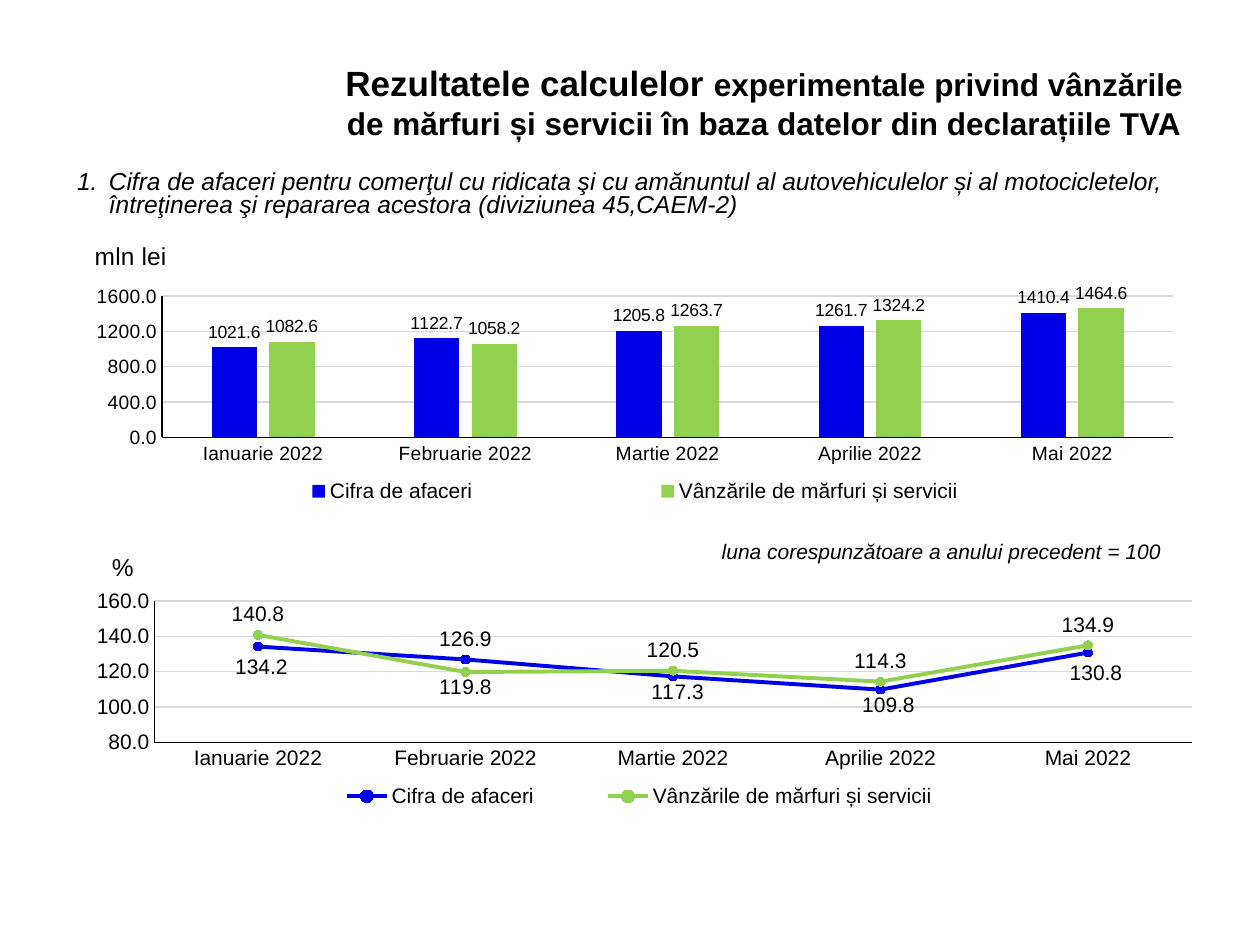
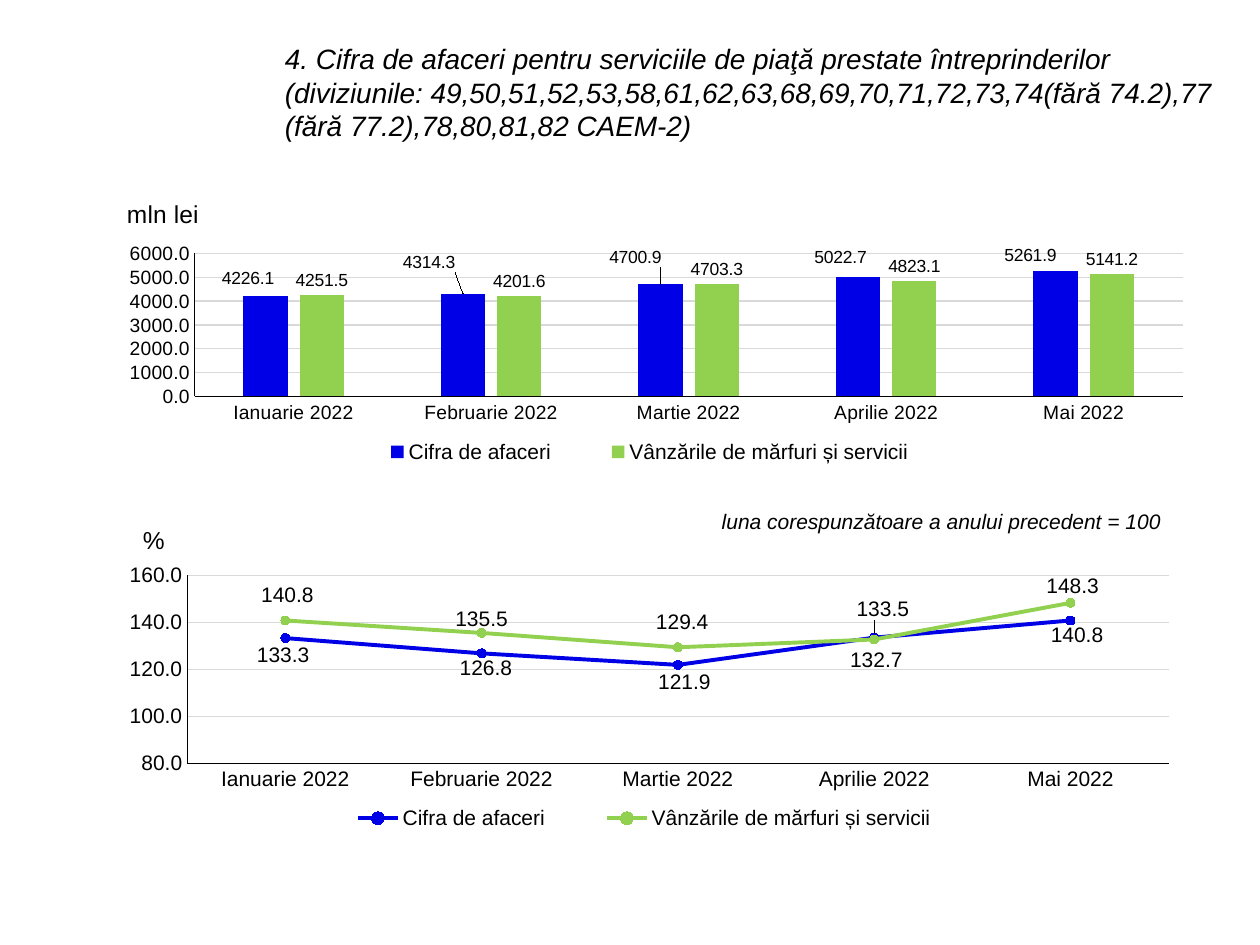
"""Build two slides of VAT turnover results, each with a column and a line chart."""
from lxml import etree
from pptx import Presentation
from pptx import util as u
from pptx.chart import data as chart_data
from pptx.dml.color import RGBColor
from pptx.enum import chart as ch
from pptx.enum import text as tx
from pptx.oxml import ns

COLORS = {"ink": "000000", "turnover": "0000E6", "sales": "92D050", "grid": "D9D9D9"}
FONT = "Arial"
MONTHS = [f"{month} 2022" for month in ("Ianuarie", "Februarie", "Martie", "Aprilie", "Mai")]
SERIES = [("Cifra de afaceri", "turnover"), ("Vânzările de mărfuri și servicii", "sales")]
NOTE = "luna corespunzătoare a anului precedent = 100"
POSITIONS = {
    "above": ch.XL_LABEL_POSITION.ABOVE,
    "below": ch.XL_LABEL_POSITION.BELOW,
    "out": ch.XL_LABEL_POSITION.OUTSIDE_END,
}
KINDS = {
    "column": dict(type=ch.XL_CHART_TYPE.COLUMN_CLUSTERED, unit="mln lei", axis_size=11,
                   label_size=10, label_at="out", format="0.0"),
    "line": dict(type=ch.XL_CHART_TYPE.LINE_MARKERS, unit="%", axis_size=12,
                 label_size=12, label_at="above", format="#,##0.0"),
}

# Boxes are in centimetres; unit, plot, legend and nudges are in percent of the chart.
SLIDES = [
    dict(
        title=[("Rezultatele calculelor ", 20),
               ("experimentale privind vânzările de mărfuri și servicii "
                "în baza datelor din declarațiile TVA", 18)],
        title_box=(6.5, 1.12, 17.81, 1.4),
        title_format=dict(bold=True, align=tx.PP_ALIGN.CENTER),
        item="Cifra de afaceri pentru comerţul cu ridicata şi cu amănuntul al autovehiculelor "
             "și al motocicletelor, întreţinerea şi repararea acestora (diviziunea 45,CAEM-2)",
        item_box=(1.3, 3.33, 23.01, 13.59),
        note_box=(14.3, 10.74, 10.21, 1.55),
        charts=[
            dict(kind="column", box=(1.5, 4.52, 22.61, 5.79), scale=(0, 1600, 400),
                 unit_at=(1.4, 4), plot=(7.8, 25, 90.2, 49.2), legend=(5, 88, 90, 10),
                 values=[(1021.6, 1122.7, 1205.8, 1261.7, 1410.4),
                         (1082.6, 1058.2, 1263.7, 1324.2, 1464.6)],
                 nudges=[{}, {}]),
            dict(kind="line", box=(1.5, 10.67, 23.01, 5.79), scale=(80, 160, 20),
                 unit_at=(2.9, 6), plot=(7, 25, 90.9, 49.2), legend=(18, 88, 63, 10),
                 values=[(134.2, 126.9, 117.3, 109.8, 130.8),
                         (140.8, 119.8, 120.5, 114.3, 134.9)],
                 nudges=[{0: ("below", 0.3, 0), 2: ("below", 0.4, -1.7),
                          3: ("below", 0.7, -1.7), 4: ("below", 0.7, 0)},
                         {1: ("below", 0, -1.7)}]),
        ],
    ),
    dict(
        title=[("4. Cifra de afaceri pentru serviciile de piaţă prestate întreprinderilor\v"
                "(diviziunile: 49,50,51,52,53,58,61,62,63,68,69,70,71,72,73,74(fără 74.2),77 "
                "(fără 77.2),78,80,81,82 CAEM-2)", 16)],
        title_box=(5.49, 0.71, 19.41, 3),
        title_format=dict(italic=True, align=tx.PP_ALIGN.LEFT),
        note_box=(14.3, 10.13, 10.21, 1.55),
        charts=[
            dict(kind="column", box=(2.16, 3.68, 22.1, 5.84), scale=(0, 6000, 1000),
                 unit_at=(1.4, 4), plot=(8, 24.5, 90.1, 49.3), legend=(21, 88, 57, 10),
                 values=[(4226.1, 4314.3, 4700.9, 5022.7, 5261.9),
                         (4251.5, 4201.6, 4703.3, 4823.1, 5141.2)],
                 nudges=[{0: ("out", -1.6, -0.7), 1: ("out", -3.1, -5.5),
                          2: ("out", -2.3, -4.1), 3: ("out", -1.6, -1.4),
                          4: ("out", -2.3, -0.3)}, {}]),
            dict(kind="line", box=(2.18, 10.13, 21.84, 6.81), scale=(80, 160, 20),
                 unit_at=(2.8, 5), plot=(7.3, 21.6, 90.6, 55.6), legend=(18, 89.5, 63, 8),
                 values=[(133.3, 126.8, 121.9, 133.5, 140.8),
                         (140.8, 135.5, 129.4, 132.7, 148.3)],
                 nudges=[{0: ("below", -0.2, -1), 1: ("below", 0.4, -1.5),
                          2: ("below", 0.6, -1), 3: ("above", 0.8, -2.4),
                          4: ("below", 0.6, -1.8)},
                         {0: ("above", 0.2, -1.5), 1: ("above", 0, 2),
                          2: ("above", 0.4, -1.2), 3: ("below", 0.2, 0),
                          4: ("above", 0.2, 1.2)}]),
        ],
    ),
]


def color(key):
    return RGBColor.from_string(COLORS[key])


def set_font(font, size, bold=False, italic=False):
    font.name, font.size, font.bold, font.italic = FONT, u.Pt(size), bold, italic
    font.color.rgb = color("ink")


def write(frame, content, size=12, bold=False, italic=False, align=None):
    paragraph = frame.paragraphs[0]
    paragraph.alignment = align
    for words, points in [(content, size)] if isinstance(content, str) else content:
        for number, part in enumerate(words.split("\v")):
            if number:
                paragraph.add_line_break()
            run = paragraph.add_run()
            run.text = part
            set_font(run.font, points, bold, italic)
    return paragraph


def fit(box, sides):
    box.left, box.top, box.width, box.height = map(u.Cm, sides)
    frame = box.text_frame
    frame.word_wrap = True
    frame.auto_size = tx.MSO_AUTO_SIZE.NONE
    frame.vertical_anchor = tx.MSO_ANCHOR.TOP
    return frame


def place(part, index, percents, modes=()):
    for old in part.findall(ns.qn("c:layout")):
        part.remove(old)
    layout = etree.Element(ns.qn("c:layout"))
    manual = etree.SubElement(layout, ns.qn("c:manualLayout"))
    sides = [(side, f"{percent / 100:g}") for side, percent in zip("xywh", percents)]
    for tag, value in [*modes, *sides]:
        etree.SubElement(manual, ns.qn(f"c:{tag}")).set("val", value)
    part.insert(index, layout)


def style_axes(chart, kind, scale):
    values = chart.value_axis
    values.minimum_scale, values.maximum_scale, values.major_unit = scale
    values.tick_labels.number_format = kind["format"]
    values.tick_labels.number_format_is_linked = False
    values.has_major_gridlines = True
    grid = values.major_gridlines.format.line
    for line, key in ((grid, "grid"), (values.format.line, "ink"),
                      (chart.category_axis.format.line, "ink")):
        line.color.rgb = color(key)
        line.width = u.Pt(0.75)
    for axis in (values, chart.category_axis):
        axis.major_tick_mark = axis.minor_tick_mark = ch.XL_TICK_MARK.NONE
        set_font(axis.tick_labels.font, kind["axis_size"])


def style_series(chart, number, series, kind, nudges):
    shade = color(SERIES[number][1])
    if kind is KINDS["line"]:
        series.smooth = False
        series.format.line.color.rgb = shade
        series.format.line.width = u.Pt(2.25)
        series.marker.style = ch.XL_MARKER_STYLE.CIRCLE
        series.marker.size = 5
        dot = series.marker.format
        dot.fill.solid()
        dot.fill.fore_color.rgb = dot.line.color.rgb = shade
    else:
        series.format.fill.solid()
        series.format.fill.fore_color.rgb = shade
    labels = series.data_labels
    labels.show_value = True
    labels.number_format, labels.number_format_is_linked = kind["format"], False
    labels.position = POSITIONS[kind["label_at"]]
    set_font(labels.font, kind["label_size"])
    for month, (side, *shift) in nudges.items():
        label = series.points[month].data_label
        set_font(label.font, kind["label_size"])
        label.position = POSITIONS[side]
        found = chart.element.xpath(
            f".//c:ser[{number + 1}]/c:dLbls/c:dLbl[c:idx/@val={month}]")
        place(found[0], 1, shift)


def add_chart(slide, kind, box, scale, unit_at, plot, legend, values, nudges):
    kind = KINDS[kind]
    figures = chart_data.CategoryChartData(number_format=kind["format"])
    figures.categories = MONTHS
    for (name, _), numbers in zip(SERIES, values):
        figures.add_series(name, numbers)
    chart = slide.shapes.add_chart(kind["type"], *map(u.Cm, box), figures).chart
    set_font(chart.font, 10)
    chart.has_title = True
    write(chart.chart_title.text_frame, kind["unit"], size=14)
    chart.has_legend = True
    chart.legend.position = ch.XL_LEGEND_POSITION.BOTTOM
    chart.legend.include_in_layout = False
    set_font(chart.legend.font, 12)
    style_axes(chart, kind, scale)
    group = chart.plots[0]
    group.vary_by_categories = False
    if kind is KINDS["column"]:
        group.gap_width, group.overlap = 219, -27
    for number, series in enumerate(group.series):
        style_series(chart, number, series, kind, nudges[number])
    edges = [("xMode", "edge"), ("yMode", "edge")]
    root = chart.element
    place(root.xpath("c:chart/c:title")[0], 1, unit_at, edges)
    place(root.xpath("c:chart/c:plotArea")[0], 0, plot, [("layoutTarget", "inner"), *edges])
    place(root.xpath("c:chart/c:legend")[0], 1, legend, edges)


def add_item(body, item, box):
    paragraph = fit(body, box).paragraphs[0]
    properties = paragraph._p.get_or_add_pPr()
    properties.set("marL", str(u.Cm(0.64)))
    properties.set("indent", str(u.Cm(-0.64)))
    etree.SubElement(properties, ns.qn("a:buFont")).set("typeface", FONT)
    etree.SubElement(properties, ns.qn("a:buAutoNum")).set("type", "arabicPeriod")
    write(body.text_frame, item, size=14, italic=True)
    paragraph.line_spacing = 0.8
    paragraph.space_before = u.Pt(0)


def main():
    deck = Presentation()
    deck.slide_width, deck.slide_height = u.Cm(25.4), u.Cm(19.05)
    for content in SLIDES:
        slide = deck.slides.add_slide(deck.slide_layouts[1 if "item" in content else 5])
        title = fit(slide.shapes.title, content["title_box"])
        write(title, content["title"], **content["title_format"])
        if "item" in content:
            add_item(slide.placeholders[1], content["item"], content["item_box"])
        for chart in content["charts"]:
            add_chart(slide, **chart)
        note = slide.shapes.add_textbox(*map(u.Cm, content["note_box"]))
        write(fit(note, content["note_box"]), NOTE, italic=True)
    deck.save("out.pptx")


if __name__ == "__main__":
    main()
